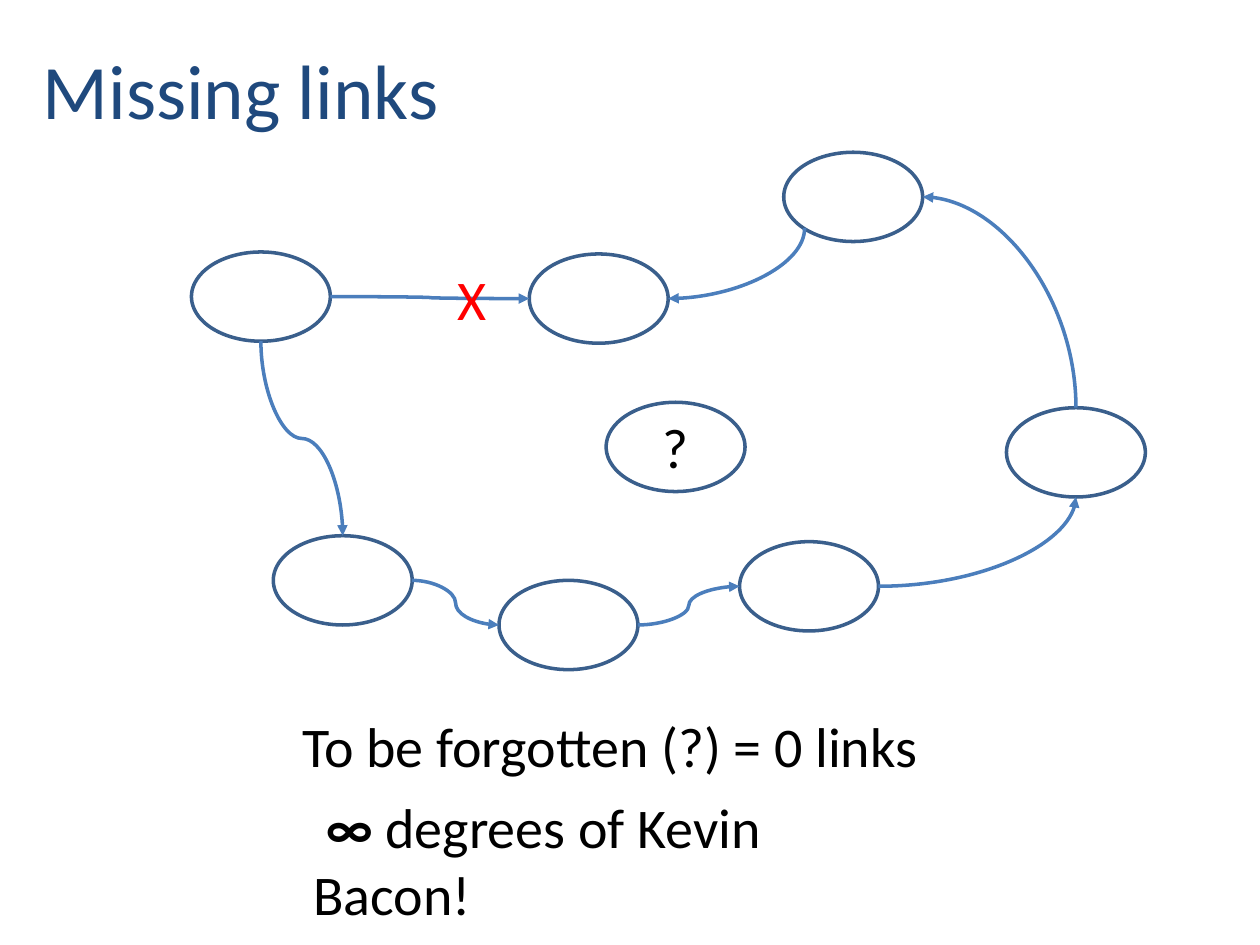
from lxml.etree import SubElement
from pptx import Presentation
from pptx.dml.color import RGBColor
from pptx.enum.shapes import MSO_CONNECTOR, MSO_SHAPE
from pptx.enum.text import MSO_AUTO_SIZE
from pptx.oxml.ns import qn
from pptx.util import Cm, Pt

# Content: node positions (left, top) in cm
NODE_W, NODE_H = 2.8, 1.8
NODES = {
    "start": (3.86, 5.08),
    "lower left": (5.51, 10.8),
    "bottom": (10.06, 11.7),
    "lower right": (14.91, 10.92),
    "target": (10.67, 5.12),
    "right": (20.29, 8.22),
    "top": (15.8, 3.07),
    "forgotten": (12.22, 8.11),
}

# Connection sites as fractions of a node's width and height
SITES = {
    "left": (0, 0.5),
    "right": (1, 0.5),
    "top": (0.5, 0),
    "bottom": (0.5, 1),
    "lower left": (0.15, 0.85),
}

# Links: from node, site, to node, site, curve preset
BEND, ARC = "curvedConnector3", "curvedConnector2"
LINKS = [
    ("top", "lower left", "target", "right", ARC),
    ("start", "right", "target", "left", BEND),
    ("start", "bottom", "lower left", "top", BEND),
    ("lower left", "right", "bottom", "left", BEND),
    ("bottom", "right", "lower right", "left", BEND),
    ("lower right", "right", "right", "bottom", ARC),
    ("right", "top", "top", "right", ARC),
]

# Texts: (left, top, width, height), wrap, size, colour, first-line indent, runs
TEXTS = [
    ((0.61, 0.74, 8.59, 1.95), False, 44, "1F497D", 0, [("Missing links", False)]),
    ((8.97, 5.21, 1.12, 1.62), False, 32, "FF0000", 0, [("X", False)]),
    ((13.11, 8.2, 1.04, 1.62), False, 32, "000000", 0, [("?", False)]),
    ((5.84, 14.22, 15.24, 1.62), True, 32, "000000", 0,
     [("To be forgotten (?) = 0 links", False)]),
    ((6.07, 15.85, 12.7, 1.62), True, 32, "000000", 0.25,
     [("∞ ", True), ("degrees of Kevin Bacon!", False)]),
]


def rgb(value):
    return RGBColor.from_string(value)


def set_line(part, colour):
    part.line.color.rgb = rgb(colour)
    part.line.width = Pt(2)


def site_point(node, site):
    (left, top), (across, down) = NODES[node], SITES[site]
    return left + across * NODE_W, top + down * NODE_H


def add_link(slide, from_node, from_site, to_node, to_site, preset):
    x1, y1 = site_point(from_node, from_site)
    x2, y2 = site_point(to_node, to_site)
    vertical = from_site not in ("left", "right")
    turn = 0
    if vertical:
        # A curve that leaves vertically is a horizontal one turned about its centre
        dx, dy = x2 - x1, y2 - y1
        mid_x, mid_y = (x1 + x2) / 2, (y1 + y2) / 2
        turn = 90 if dy > 0 else 270
        half_w = abs(dy) / 2
        half_h = abs(dx) / 2 * (-1 if (dx > 0) == (dy > 0) else 1)
        x1, y1, x2, y2 = mid_x - half_w, mid_y - half_h, mid_x + half_w, mid_y + half_h
    link = slide.shapes.add_connector(
        MSO_CONNECTOR.CURVE, Cm(x1), Cm(y1), Cm(x2), Cm(y2))
    set_line(link, "4B7EBC")
    properties = link._element.spPr
    properties.find(qn("a:prstGeom")).set("prst", preset)
    if turn:
        properties.find(qn("a:xfrm")).set("rot", str(turn * 60000))
    SubElement(properties.find(qn("a:ln")), qn("a:tailEnd"), type="triangle")
    SubElement(properties, qn("a:effectLst"))


def add_text(slide, place, wrap, size, colour, indent, runs):
    frame = slide.shapes.add_textbox(*map(Cm, place)).text_frame
    frame.word_wrap = wrap
    frame.auto_size = MSO_AUTO_SIZE.SHAPE_TO_FIT_TEXT
    paragraph = frame.paragraphs[0]
    if indent:
        paragraph._p.get_or_add_pPr().set("indent", str(Cm(indent)))
    for words, bold in runs:
        run = paragraph.add_run()
        run.text = words
        run.font.color.rgb = rgb(colour)
        font_format = {"name": "Calibri", "size": Pt(size), "bold": bold}
        for attribute, value in font_format.items():
            setattr(run.font, attribute, value)


def main():
    deck = Presentation()
    deck.slide_width, deck.slide_height = Cm(25.4), Cm(19.05)
    slide = deck.slides.add_slide(deck.slide_layouts[6])

    # Nodes
    for left, top in NODES.values():
        node = slide.shapes.add_shape(
            MSO_SHAPE.OVAL, Cm(left), Cm(top), Cm(NODE_W), Cm(NODE_H))
        node.shadow.inherit = False
        node.fill.background()
        set_line(node, "3A5F8C")

    # Links between them
    for link in LINKS:
        add_link(slide, *link)

    # Title, marks and conclusions
    for text in TEXTS:
        add_text(slide, *text)

    deck.save("out.pptx")


if __name__ == "__main__":
    main()
